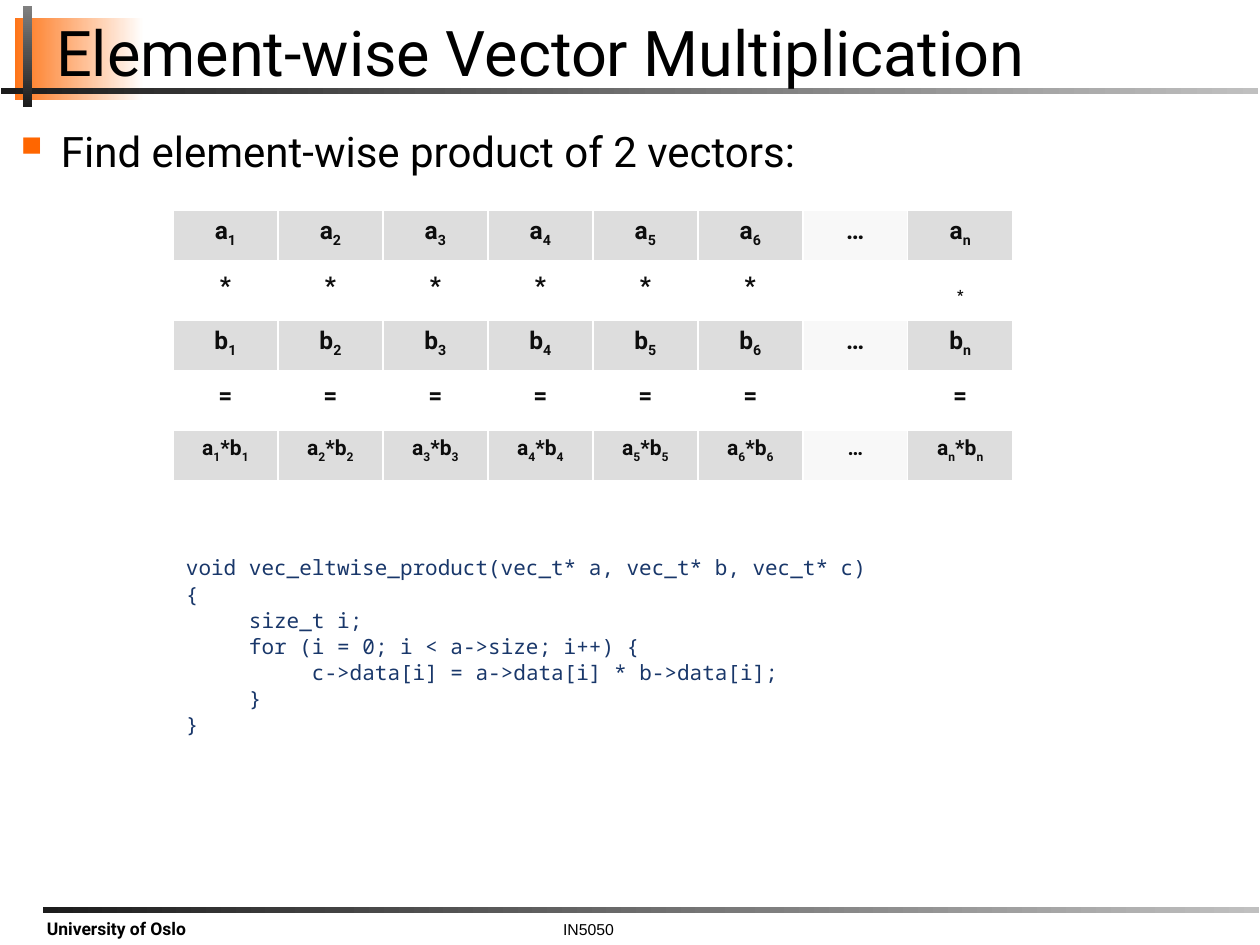
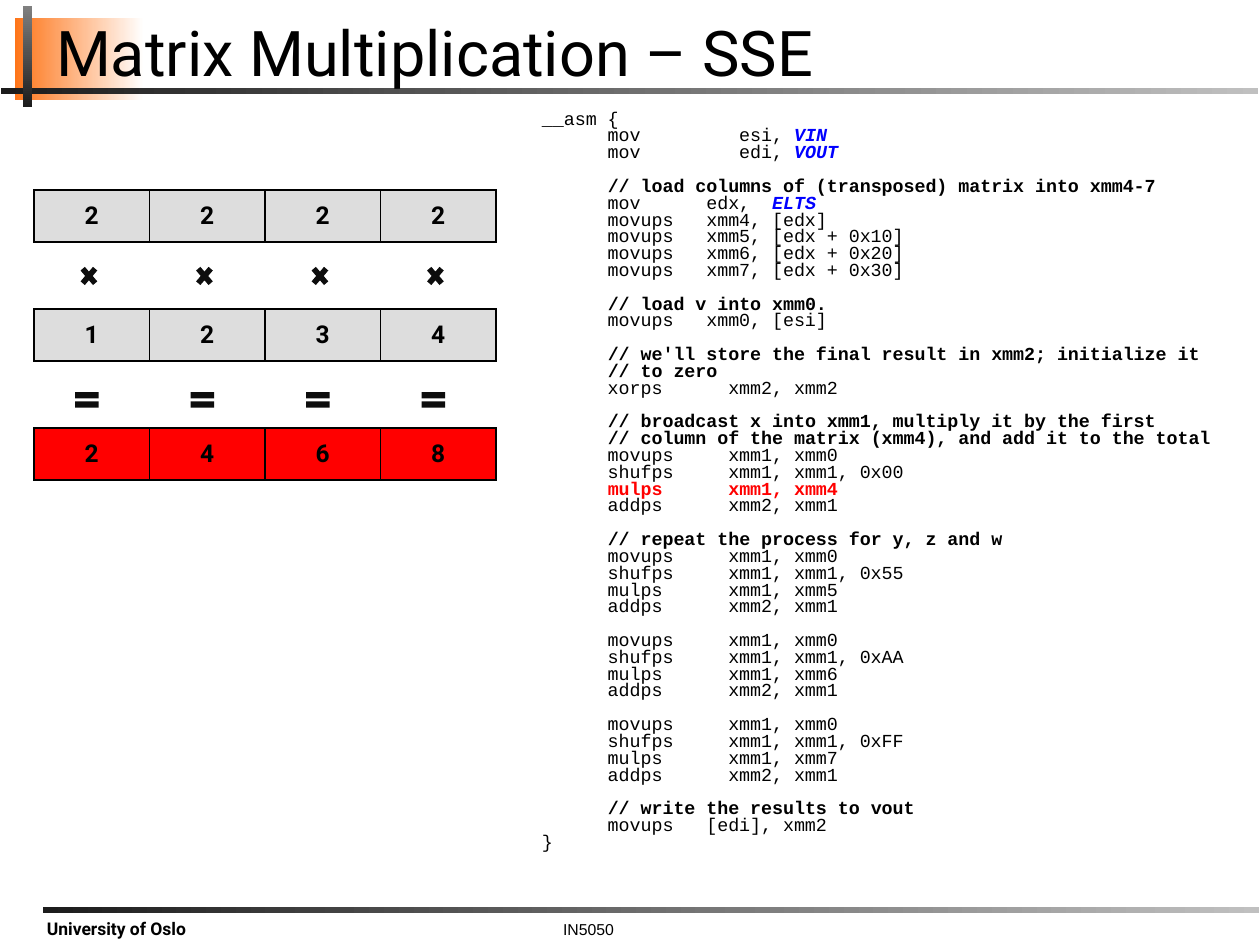
from lxml import etree
from pptx import Presentation
from pptx.dml.color import RGBColor
from pptx.enum.shapes import MSO_SHAPE
from pptx.enum.text import MSO_ANCHOR, MSO_AUTO_SIZE, PP_ALIGN
from pptx.oxml.ns import qn
from pptx.util import Emu, Pt

BLACK = RGBColor(0x00, 0x00, 0x00)
WHITE = RGBColor(0xFF, 0xFF, 0xFF)
INK = RGBColor(0x0D, 0x0D, 0x0D)
CHARCOAL = RGBColor(0x1C, 0x1C, 0x1C)
GRAY = RGBColor(0x80, 0x80, 0x80)
SILVER = RGBColor(0xC0, 0xC0, 0xC0)
CELL_GRAY = RGBColor(0xDD, 0xDD, 0xDD)
CELL_PALE = RGBColor(0xF8, 0xF8, 0xF8)
ORANGE = RGBColor(0xFE, 0x75, 0x19)
BULLET = RGBColor(0xFF, 0x66, 0x00)
NAVY = RGBColor(0x19, 0x37, 0x6A)
BLUE = RGBColor(0x00, 0x00, 0xFF)
RED = RGBColor(0xFF, 0x00, 0x00)

TITLE_FONT = {"name": "Roboto", "size": Pt(36), "color": BLACK}
BODY_FONT = {"name": "Roboto", "size": Pt(24), "color": BLACK}
C_FONT = {"name": "Noto Sans Mono", "size": Pt(12), "color": NAVY}
ASM_FONT = {"name": "Courier New", "size": Pt(10.5), "color": BLACK}
CELL_FONT = {"name": "Roboto", "size": Pt(14), "color": INK, "bold": True}
PRODUCT_FONT = {**CELL_FONT, "size": Pt(12)}
MATRIX_FONT = {**CELL_FONT, "color": BLACK}

BANDS = [
    ((15, 18, 129, 82), ORANGE, WHITE, 0),
    ((1, 88, 1257, 6), CHARCOAL, SILVER, 0),
    ((-23, 52, 101, 9), CHARCOAL, GRAY, 270),
    ((43, 907, 1216, 6), CHARCOAL, SILVER, 0),
]
FOOTERS = [
    ("IN5050", (229, 916, 719, 29), PP_ALIGN.CENTER,
     {"name": "Arial", "size": Pt(9), "color": BLACK}),
    ("University of Oslo", (34, 914, 205, 30), PP_ALIGN.LEFT,
     {"name": "Roboto", "size": Pt(10), "color": BLACK, "bold": True}),
]

INDICES = ["1", "2", "3", "4", "5", "6", None, "n"]
VECTOR_ROWS = [
    ([f"a_{i}" if i else "…" for i in INDICES], CELL_FONT, True),
    (["*"] * 6 + ["", "_*"], CELL_FONT, False),
    ([f"b_{i}" if i else "…" for i in INDICES], CELL_FONT, True),
    (["="] * 6 + ["", "="], CELL_FONT, False),
    ([f"a_{i}*b_{i}" if i else "…" for i in INDICES], PRODUCT_FONT, True),
]
VECTOR_BORDERS = {"L": (WHITE, 1), "R": (WHITE, 1), "T": (WHITE, 1), "B": (WHITE, 3)}

C_CODE = """void vec_eltwise_product(vec_t* a, vec_t* b, vec_t* c)
{
\tsize_t i;
\tfor (i = 0; i < a->size; i++) {
\t\tc->data[i] = a->data[i] * b->data[i];
\t}
}"""

MATRIX_ROWS = [("2222", CELL_GRAY), ("1234", CELL_GRAY), ("2468", RED)]
MATRIX_BORDERS = {side: (BLACK, 1) for side in "LRTB"}
SIGNS = [
    (MSO_SHAPE.MATH_MULTIPLY, (77, 262, 24, 28)),
    (MSO_SHAPE.MATH_EQUAL, (71, 387, 32, 26)),
]
SIGN_STEP = 115.5


def multiply_step(mask, column):
    return f"""      movups     xmm1, xmm0
      shufps     xmm1, xmm1, {mask}
      mulps      xmm1, {column}
      addps      xmm2, xmm1"""


ASM_BLOCKS = [
    """__asm {
      mov         esi, VIN
      mov         edi, VOUT""",
    """      // load columns of (transposed) matrix into xmm4-7
      mov      edx,  ELTS
      movups   xmm4, [edx]
      movups   xmm5, [edx + 0x10]
      movups   xmm6, [edx + 0x20]
      movups   xmm7, [edx + 0x30]""",
    """      // load v into xmm0.
      movups   xmm0, [esi]""",
    """      // we'll store the final result in xmm2; initialize it
      // to zero
      xorps      xmm2, xmm2""",
    """      // broadcast x into xmm1, multiply it by the first
      // column of the matrix (xmm4), and add it to the total
""" + multiply_step("0x00", "xmm4"),
    "      // repeat the process for y, z and w\n" + multiply_step("0x55", "xmm5"),
    multiply_step("0xAA", "xmm6"),
    multiply_step("0xFF", "xmm7"),
    """      // write the results to vout
      movups   [edi], xmm2
}""",
]
SYMBOL = {"color": BLUE, "bold": True, "italic": True}
MARKS = {"//": {"bold": True}, "VIN": SYMBOL, "VOUT": SYMBOL, "ELTS": SYMBOL,
         "mulps      xmm1, xmm4": {"color": RED, "bold": True}}


def px(length):
    return Emu(round(length * 914400 / 126))


def place(shape, area):
    for name, length in zip(("left", "top", "width", "height"), area):
        setattr(shape, name, px(length))


def set_frame(frame, margins=(13, 6, 13, 6), **values):
    sides = ("margin_left", "margin_top", "margin_right", "margin_bottom")
    values = {"word_wrap": True, "auto_size": MSO_AUTO_SIZE.NONE,
              **dict(zip(sides, map(px, margins))), **values}
    for name, value in values.items():
        setattr(frame, name, value)


def add_span(para, text, style):
    span = para.add_run()
    span.text = text
    for name, value in style.items():
        if name == "color":
            span.font.color.rgb = value
        else:
            setattr(span.font, name, value)
    return span


def add_text_box(page, area, **values):
    box = page.shapes.add_textbox(*map(px, area))
    set_frame(box.text_frame, **values)
    return box.text_frame


def next_para(frame, index):
    return frame.add_paragraph() if index else frame.paragraphs[0]


def add_page(deck, title_text):
    page = deck.slides.add_slide(deck.slide_layouts[5])
    for area, start, end, rotation in BANDS:
        band = page.shapes.add_shape(MSO_SHAPE.RECTANGLE, *map(px, area))
        band.shadow.inherit = False
        band.line.fill.background()
        band.fill.gradient()
        band.fill.gradient_angle = 0
        for stop, color in zip(band.fill.gradient_stops, (start, end)):
            stop.color.rgb = color
        band.rotation = rotation
    for text, area, alignment, style in FOOTERS:
        para = add_text_box(page, area, margins=(13, 4, 13, 6)).paragraphs[0]
        para.alignment = alignment
        add_span(para, text, style)

    title = page.shapes.title
    page.shapes.element.append(title.element)
    place(title, (43, 18, 1212, 77))
    set_frame(title.text_frame, (13, 6, 5, 6), vertical_anchor=MSO_ANCHOR.BOTTOM)
    para = title.text_frame.paragraphs[0]
    para.alignment = PP_ALIGN.LEFT
    para.line_spacing = 0.8
    add_span(para, title_text, TITLE_FONT)
    return page


def add_bullet(para, indent):
    properties = para._p.get_or_add_pPr()
    properties.set("marL", str(px(indent)))
    properties.set("indent", str(-px(indent)))
    color = etree.SubElement(properties, qn("a:buClr"))
    etree.SubElement(color, qn("a:srgbClr"), val=str(BULLET))
    etree.SubElement(properties, qn("a:buSzPct"), val="120000")
    etree.SubElement(properties, qn("a:buChar"), char="▪")


def set_borders(cell, borders):
    properties = cell._tc.get_or_add_tcPr()
    for index, (side, (color, points)) in enumerate(borders.items()):
        line = etree.Element(qn(f"a:ln{side}"), w=str(Pt(points)))
        fill = etree.SubElement(line, qn("a:solidFill"))
        etree.SubElement(fill, qn("a:srgbClr"), val=str(color))
        properties.insert(index, line)


def add_indexed_text(para, text, style):
    base, *rest = text.split("_")
    parts = [(base, False)]
    for part in rest:
        parts += [(part[0], True), (part[1:], False)]
    for part, lowered in parts:
        if part:
            span = add_span(para, part, style)
            if lowered:
                span._r.get_or_add_rPr().set("baseline", "-25000")


def add_row_table(page, area, texts, fills, style, borders, anchor):
    table = page.shapes.add_table(1, len(texts), *map(px, area)).table
    table.first_row = table.horz_banding = False
    for cell, text, fill in zip(table.iter_cells(), texts, fills):
        if fill is None:
            cell.fill.background()
        else:
            cell.fill.solid()
            cell.fill.fore_color.rgb = fill
        set_borders(cell, borders)
        cell.vertical_anchor = anchor
        para = cell.text_frame.paragraphs[0]
        para.alignment = PP_ALIGN.CENTER
        add_indexed_text(para, text, style)


def build_vector_page(deck):
    page = add_page(deck, "Element-wise Vector Multiplication")
    para = add_text_box(page, (0, 120, 1260, 78), margins=(13, 6, 8, 6)).paragraphs[0]
    add_bullet(para, 48)
    add_span(para, "Find element-wise product of 2 vectors:", BODY_FONT)

    code = add_text_box(page, (173, 549, 827, 222))
    for index, line in enumerate(C_CODE.split("\n")):
        para = next_para(code, index)
        if index:
            para.space_before = Pt(0.5)
        add_span(para, line, C_FONT)

    for index, (texts, style, filled) in enumerate(VECTOR_ROWS):
        fills = [(CELL_PALE if text == "…" else CELL_GRAY) if filled else None
                 for text in texts]
        add_row_table(page, (173, 210 + 55 * index, 840, 52), texts, fills, style,
                      VECTOR_BORDERS, MSO_ANCHOR.TOP)


def add_asm_line(para, line):
    mark = next((mark for mark in MARKS if mark in line), None)
    if mark is None:
        add_span(para, line, ASM_FONT)
        return
    start = line.index(mark)
    add_span(para, line[:start], ASM_FONT)
    add_span(para, line[start:], {**ASM_FONT, **MARKS[mark]})


def build_matrix_page(deck):
    page = add_page(deck, "Matrix Multiplication – SSE")
    code = add_text_box(page, (529, 112, 714, 747), margins=(13, 0, 13, 0))
    for block_index, block in enumerate(ASM_BLOCKS):
        for line_index, line in enumerate(block.split("\n")):
            para = next_para(code, block_index + line_index)
            para.line_spacing = Pt(9.6)
            if block_index and not line_index:
                para.space_before = Pt(9.6)
            add_asm_line(para, line)

    for index, (digits, fill) in enumerate(MATRIX_ROWS):
        add_row_table(page, (34, 190 + 119 * index, 462, 52), digits,
                      [fill] * len(digits), MATRIX_FONT, MATRIX_BORDERS, MSO_ANCHOR.MIDDLE)
    for kind, (left, top, width, height) in SIGNS:
        for column in range(4):
            area = (left + column * SIGN_STEP, top, width, height)
            sign = page.shapes.add_shape(kind, *map(px, area))
            sign.shadow.inherit = False
            sign.fill.solid()
            sign.fill.fore_color.rgb = INK
            sign.line.fill.background()


def main():
    deck = Presentation()
    deck.slide_width, deck.slide_height = px(1260), px(945)
    build_vector_page(deck)
    build_matrix_page(deck)
    deck.save("out.pptx")


if __name__ == "__main__":
    main()
